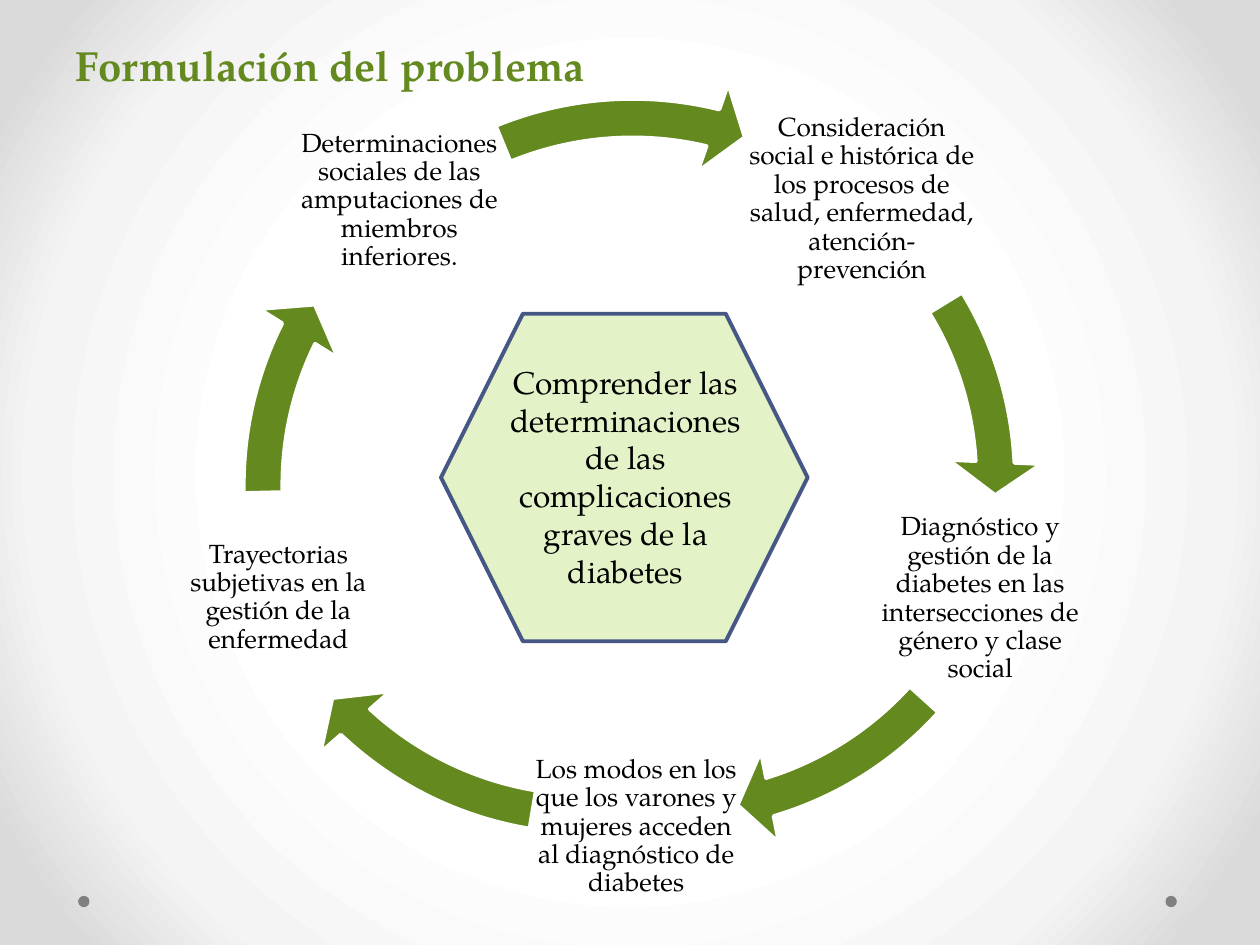
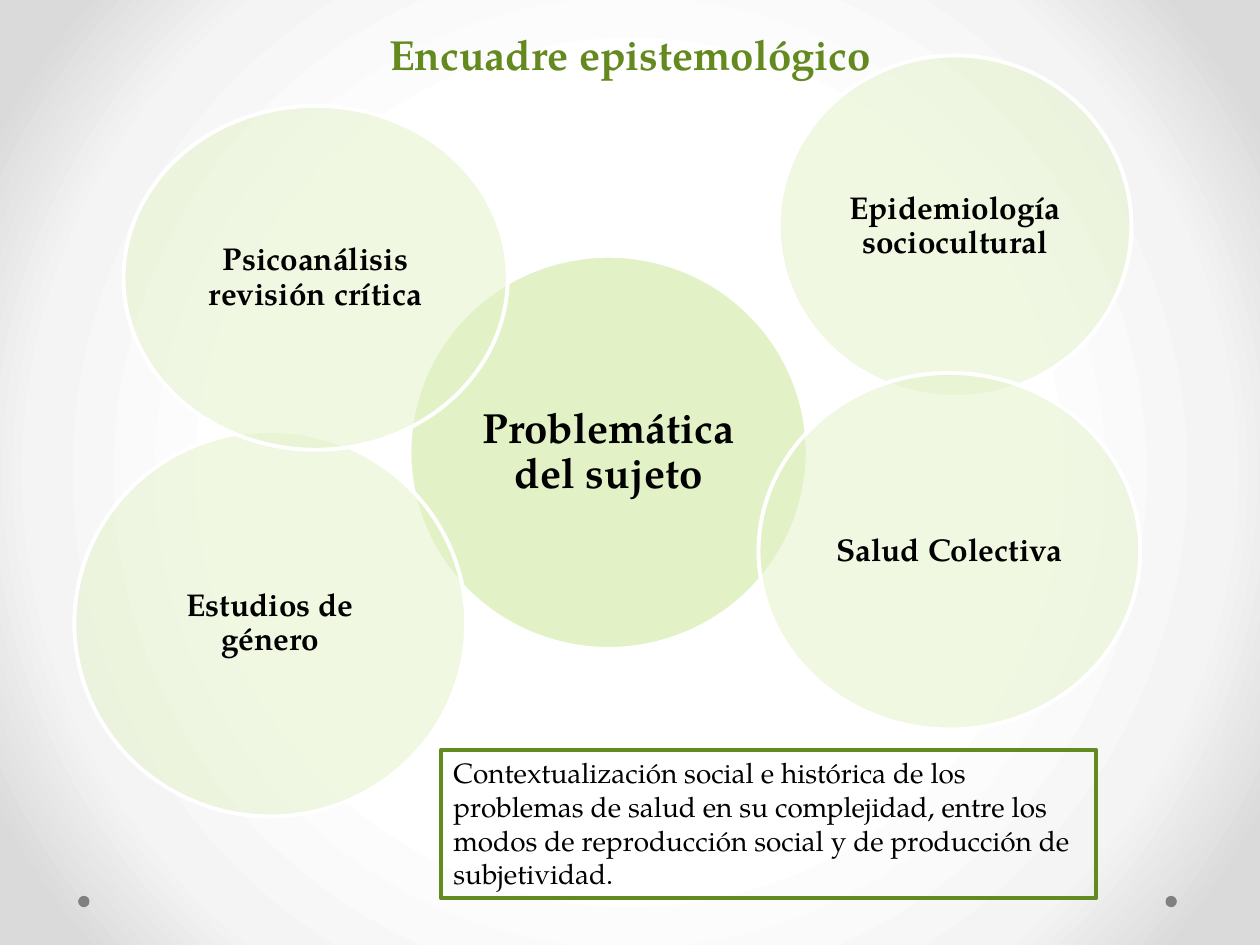
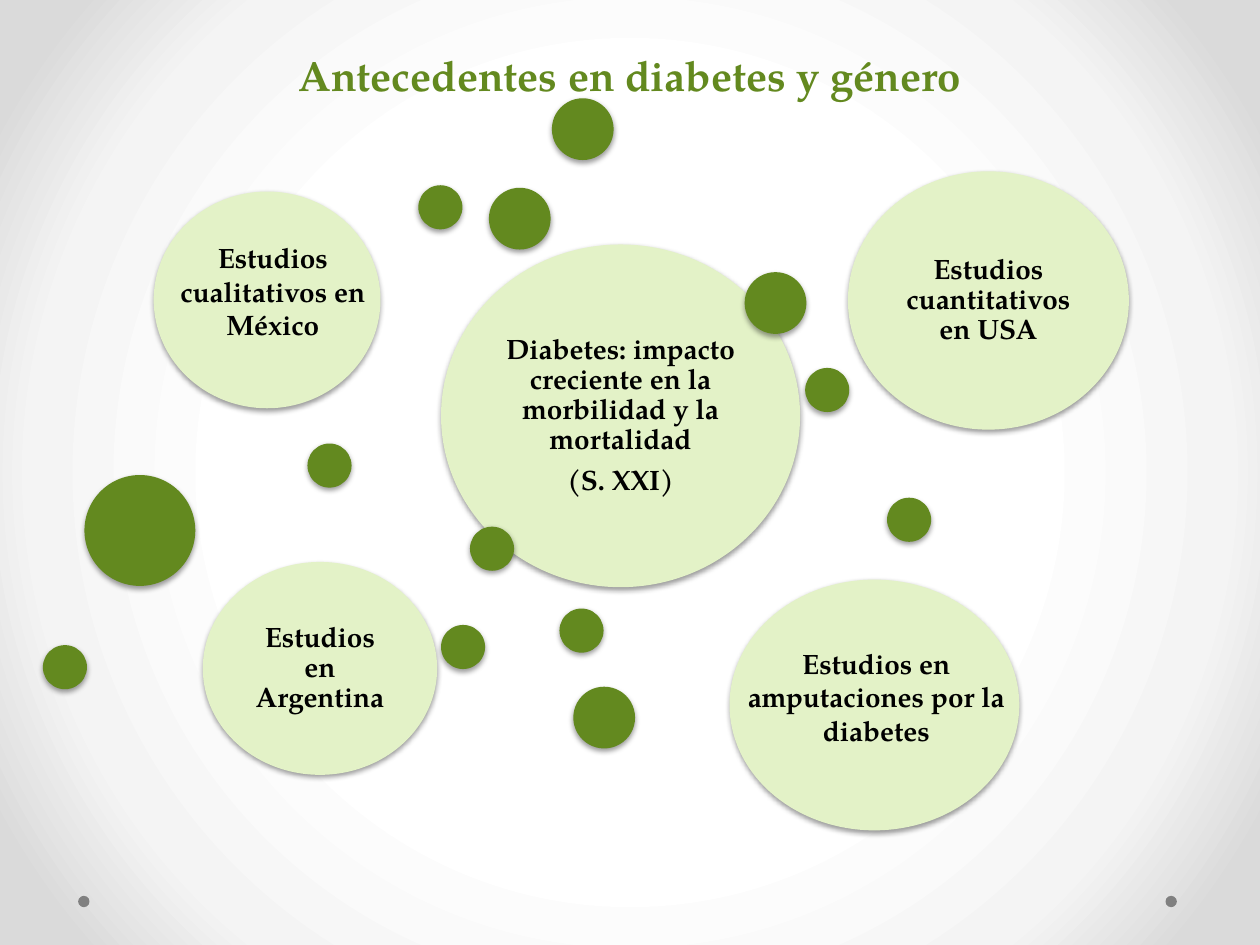
from dataclasses import dataclass
from typing import Optional

import lxml.etree
import pptx
import pptx.dml.color
import pptx.enum.shapes
import pptx.enum.text
import pptx.oxml.ns
import pptx.presentation
import pptx.shapes.autoshape
import pptx.slide
import pptx.text.text
import pptx.util

# Shared style
Inches = pptx.util.Inches
RGBColor = pptx.dml.color.RGBColor
MSO_SHAPE = pptx.enum.shapes.MSO_SHAPE
MSO_ANCHOR = pptx.enum.text.MSO_ANCHOR
MSO_AUTO_SIZE = pptx.enum.text.MSO_AUTO_SIZE
PP_ALIGN = pptx.enum.text.PP_ALIGN
qn = pptx.oxml.ns.qn

GREEN = RGBColor(0x63, 0x89, 0x1F)
MID_GREEN = RGBColor(0xC7, 0xE6, 0x8F)
PALE_GREEN = RGBColor(0xE3, 0xF2, 0xC7)
NAVY = RGBColor(0x47, 0x57, 0x85)
GREY = RGBColor(0x80, 0x80, 0x80)
WHITE = RGBColor(0xFF, 0xFF, 0xFF)
BLACK = RGBColor(0x00, 0x00, 0x00)
BACKGROUND_STOPS = ((50, WHITE), (76, RGBColor(0xF4, 0xF4, 0xF4)), (92, RGBColor(0xDA, 0xDA, 0xDA)))

FONT = "TeX Gyre Pagella"
LINE_WIDTH = pptx.util.Pt(2.25)
TITLE_LAYOUT = 5


@dataclass(frozen=True)
class Box:
    left: float
    top: float
    width: float
    height: float

    def lengths(self) -> tuple[int, int, int, int]:
        return Inches(self.left), Inches(self.top), Inches(self.width), Inches(self.height)


@dataclass(frozen=True)
class TextStyle:
    size: float
    bold: bool = False
    color: RGBColor = BLACK
    align: PP_ALIGN = PP_ALIGN.CENTER
    anchor: MSO_ANCHOR = MSO_ANCHOR.TOP
    inset: Optional[float] = None
    line_spacing: Optional[float] = None
    space_after: float = 0
    auto_size: MSO_AUTO_SIZE = MSO_AUTO_SIZE.SHAPE_TO_FIT_TEXT


def diagram_style(size: float, inset: float, bold: bool = True) -> TextStyle:
    return TextStyle(size, bold, anchor=MSO_ANCHOR.MIDDLE, inset=inset, line_spacing=0.9,
                     space_after=round(size * 0.35), auto_size=MSO_AUTO_SIZE.NONE)


@dataclass(frozen=True)
class Bubble:
    box: Box
    text: str = ""
    size: float = 16
    fill: RGBColor = PALE_GREEN


@dataclass(frozen=True)
class CycleStep:
    text: str
    text_box: Box
    arrow_left: float
    arrow_top: float
    arrow_end: float
    arrow_start: float


# Shared drawing functions
def write_text(frame: pptx.text.text.TextFrame, text: str, style: TextStyle) -> None:
    frame.text = text
    frame.word_wrap = True
    frame.auto_size = style.auto_size
    frame.vertical_anchor = style.anchor
    if style.inset is not None:
        frame.margin_left = frame.margin_right = Inches(style.inset)
        frame.margin_top = frame.margin_bottom = Inches(style.inset)
    for paragraph in frame.paragraphs:
        paragraph.alignment = style.align
        paragraph.space_after = pptx.util.Pt(style.space_after)
        if style.line_spacing is not None:
            paragraph.line_spacing = style.line_spacing
        for run in paragraph.runs:
            run.font.name = FONT
            run.font.size = pptx.util.Pt(style.size)
            run.font.bold = style.bold
            run.font.color.rgb = style.color


def add_text(slide: pptx.slide.Slide, box: Box, text: str, style: TextStyle) -> None:
    write_text(slide.shapes.add_textbox(*box.lengths()).text_frame, text, style)


def add_shape(slide: pptx.slide.Slide, kind: MSO_SHAPE, box: Box, fill: Optional[RGBColor],
              line: Optional[RGBColor] = None) -> pptx.shapes.autoshape.Shape:
    shape = slide.shapes.add_shape(kind, *box.lengths())
    shape.shadow.inherit = False
    if fill is None:
        shape.fill.background()
    else:
        shape.fill.solid()
        shape.fill.fore_color.rgb = fill
    if line is None:
        shape.line.fill.background()
    else:
        shape.line.color.rgb = line
        shape.line.width = LINE_WIDTH
    return shape


def add_color(parent: lxml.etree._Element, color: RGBColor,
              opacity: int = 100) -> None:
    element = lxml.etree.SubElement(parent, qn("a:srgbClr"), val=str(color))
    if opacity < 100:
        lxml.etree.SubElement(element, qn("a:alpha"), val=str(opacity * 1000))


def set_opacity(shape: pptx.shapes.autoshape.Shape, percent: int) -> None:
    color = shape.element.spPr.find(qn("a:solidFill")).find(qn("a:srgbClr"))
    lxml.etree.SubElement(color, qn("a:alpha"), val=str(percent * 1000))


def add_soft_shadow(shape: pptx.shapes.autoshape.Shape) -> None:
    effects = shape.element.spPr.find(qn("a:effectLst"))
    shadow = lxml.etree.SubElement(
        effects, qn("a:outerShdw"), blurRad=str(pptx.util.Pt(3.1)),
        dist=str(pptx.util.Pt(1.6)), dir=str(90 * 60000), rotWithShape="0")
    add_color(shadow, BLACK, 38)


def set_background(presentation: pptx.presentation.Presentation) -> None:
    master = presentation.slide_master
    master.background.fill.gradient()
    gradient = next(master.element.iter(qn("a:gradFill")))
    for child in list(gradient):
        gradient.remove(child)
    stops = lxml.etree.SubElement(gradient, qn("a:gsLst"))
    for position, color in BACKGROUND_STOPS:
        stop = lxml.etree.SubElement(stops, qn("a:gs"), pos=str(position * 1000))
        add_color(stop, color)
    circle = lxml.etree.SubElement(gradient, qn("a:path"))
    circle.set("path", "circle")
    center = {side: "50000" for side in "ltrb"}
    lxml.etree.SubElement(circle, qn("a:fillToRect"), center)


def add_slide(presentation: pptx.presentation.Presentation, title: str, title_height: float,
              align: PP_ALIGN = PP_ALIGN.CENTER) -> pptx.slide.Slide:
    slide = presentation.slides.add_slide(presentation.slide_layouts[TITLE_LAYOUT])
    placeholder = slide.shapes.title
    placeholder.left, placeholder.top, placeholder.width, placeholder.height = \
        Box(0.5, 0, 9, title_height).lengths()
    write_text(placeholder.text_frame, title, TextStyle(
        24, True, GREEN, align, MSO_ANCHOR.BOTTOM, line_spacing=pptx.util.Pt(58),
        auto_size=MSO_AUTO_SIZE.NONE))
    for left in (0.62, 9.25):
        add_shape(slide, MSO_SHAPE.OVAL, Box(left, 7.11, 0.09, 0.09), GREY)
    return slide


# Slide 1: cycle of arrows around the central aim
ARROW_SIZE = 6.14
CYCLE_STEPS = (
    CycleStep("Consideración social e histórica de los procesos de salud, enfermedad, "
              "atención-prevención", Box(5.92, 0.76, 1.84, 1.64), 2.13, 0.74, 214.17, 197.15),
    CycleStep("Diagnóstico y gestión de la diabetes en las intersecciones de género y clase "
              "social", Box(6.96, 3.93, 1.64, 1.64), 2.26, 0.67, 43.92, 25.27),
    CycleStep("Los modos en los que los varones y mujeres acceden al diagnóstico de diabetes",
              Box(4.23, 5.74, 1.64, 1.64), 1.6, 0.69, 79.91, 59.64),
    CycleStep("Trayectorias subjetivas en la gestión de la enfermedad",
              Box(1.39, 3.92, 1.64, 1.64), 1.72, 0.78, 123.85, 107.23),
    CycleStep("Determinaciones sociales de las amputaciones de miembros inferiores.",
              Box(2.35, 0.77, 1.64, 1.64), 1.95, 0.57, 170.2, 148.6),
)


def build_problem(presentation: pptx.presentation.Presentation) -> None:
    slide = add_slide(presentation, "Formulación del problema", 0.76, PP_ALIGN.LEFT)
    step_style = diagram_style(15, 0.02, bold=False)
    for step in CYCLE_STEPS:
        add_text(slide, step.text_box, step.text, step_style)
        arrow_box = Box(step.arrow_left, step.arrow_top, ARROW_SIZE, ARROW_SIZE)
        arrow = add_shape(slide, MSO_SHAPE.CIRCULAR_ARROW, arrow_box, GREEN, WHITE)
        adjustments = (0.05, 3.36, step.arrow_end, step.arrow_start, 0.06)
        for index, value in enumerate(adjustments):
            arrow.adjustments[index] = value
    add_shape(slide, MSO_SHAPE.HEXAGON, Box(3.5, 2.49, 2.91, 2.6), PALE_GREEN, NAVY)
    add_text(slide, Box(3.94, 2.83, 2.05, 1.92),
             "Comprender las determinaciones de las complicaciones graves de la diabetes",
             TextStyle(18))


# Slide 2: overlapping fields of knowledge
FIELDS = (
    Bubble(Box(3.25, 2.03, 3.16, 3.12), "Problemática del sujeto", 24, MID_GREEN),
    Bubble(Box(6.18, 0.44, 2.8, 2.71), "Epidemiología sociocultural", 18),
    Bubble(Box(6.02, 2.96, 3.03, 2.83), "Salud Colectiva", 18),
    Bubble(Box(0.59, 3.42, 3.11, 3.06), "Estudios de género", 18),
    Bubble(Box(0.98, 0.84, 3.05, 2.73), "Psicoanálisis revisión crítica", 18),
)


def build_framework(presentation: pptx.presentation.Presentation) -> None:
    slide = add_slide(presentation, "Encuadre epistemológico", 0.68)
    for field in FIELDS:
        circle = add_shape(slide, MSO_SHAPE.OVAL, field.box, field.fill, WHITE)
        set_opacity(circle, 50)
        write_text(circle.text_frame, field.text, diagram_style(field.size, 0.03))
    context = add_shape(slide, MSO_SHAPE.RECTANGLE, Box(3.5, 5.95, 5.2, 1.18), None, GREEN)
    write_text(context.text_frame,
               "Contextualización social e histórica de los problemas de salud en su "
               "complejidad, entre los modos de reproducción social y de producción de "
               "subjetividad.", TextStyle(16, align=PP_ALIGN.LEFT))


# Slide 3: earlier studies among scattered dots
STUDIES = (
    Bubble(Box(3.5, 1.94, 2.85, 2.72),
           "Diabetes: impacto creciente en la morbilidad y la mortalidad\n(S. XXI)"),
    Bubble(Box(1.22, 1.52, 1.8, 1.72)),
    Bubble(Box(6.73, 1.36, 2.23, 2.05), "Estudios cuantitativos en USA"),
    Bubble(Box(5.79, 4.6, 2.3, 1.99)),
    Bubble(Box(1.61, 4.46, 1.86, 1.69), "Estudios en Argentina"),
)
STUDY_LABELS = (
    (Box(1.22, 1.86, 1.89, 0.91), "Estudios cualitativos en México"),
    (Box(5.79, 5.08, 2.33, 0.91), "Estudios en amputaciones por la diabetes"),
)
DOTS_BY_DIAMETER = {
    0.35: ((3.5, 4.96), (6.39, 2.92), (3.32, 1.47), (2.44, 3.52), (0.34, 5.12),
           (3.73, 4.18), (7.04, 3.95), (4.44, 4.83)),
    0.49: ((4.38, 0.78), (4.55, 5.45), (3.88, 1.49), (5.91, 2.16)),
    0.88: ((0.67, 3.77),),
}


def build_background_studies(presentation: pptx.presentation.Presentation) -> None:
    slide = add_slide(presentation, "Antecedentes en diabetes y género", 0.84)
    dots = [Bubble(Box(left, top, diameter, diameter), fill=GREEN)
            for diameter, corners in DOTS_BY_DIAMETER.items() for left, top in corners]
    for bubble in (*STUDIES, *dots):
        circle = add_shape(slide, MSO_SHAPE.OVAL, bubble.box, bubble.fill)
        add_soft_shadow(circle)
        if bubble.text:
            write_text(circle.text_frame, bubble.text, diagram_style(bubble.size, 0.07))
    for box, text in STUDY_LABELS:
        add_text(slide, box, text, TextStyle(16, bold=True))


def main() -> None:
    presentation = pptx.Presentation()
    presentation.slide_width = Inches(10)
    presentation.slide_height = Inches(7.5)
    set_background(presentation)
    build_problem(presentation)
    build_framework(presentation)
    build_background_studies(presentation)
    presentation.save("out.pptx")


if __name__ == "__main__":
    main()
